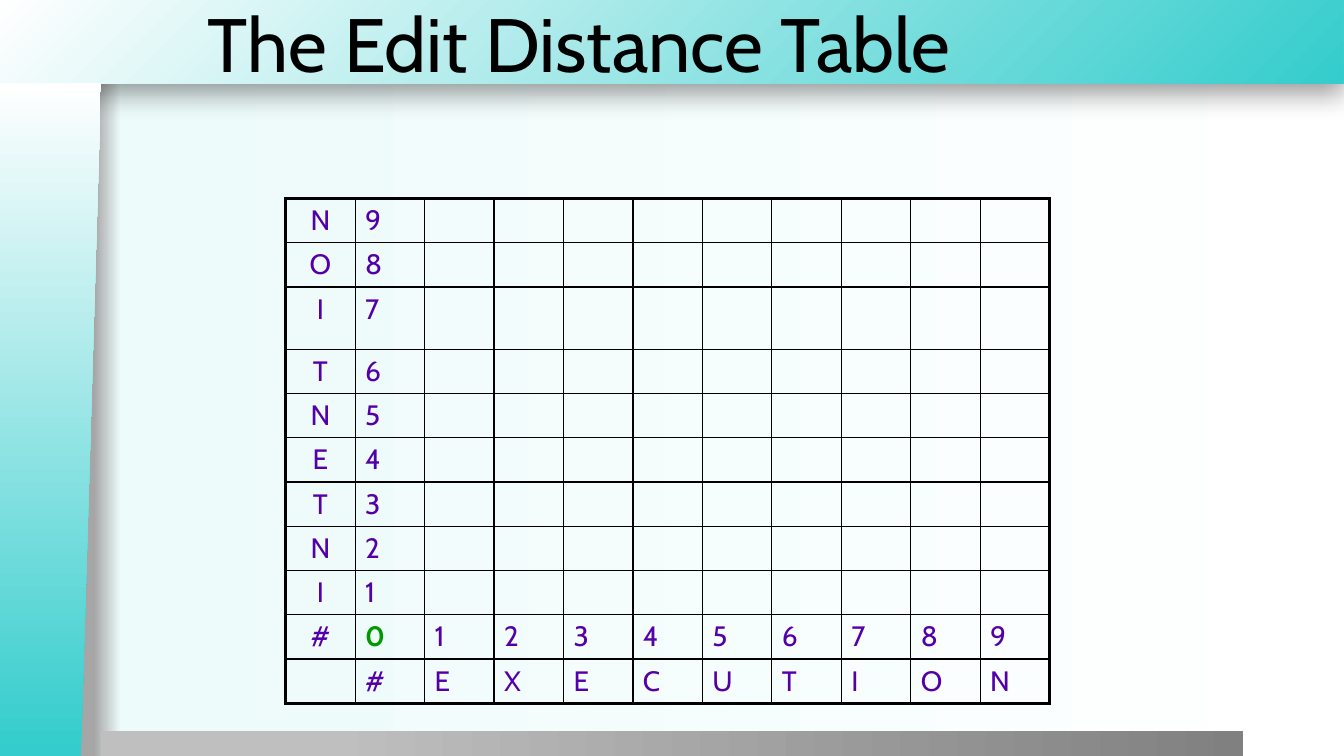
from dataclasses import dataclass

from lxml import etree
from pptx import Presentation
from pptx.dml.color import RGBColor
from pptx.dml.fill import FillFormat
from pptx.enum.shapes import MSO_SHAPE
from pptx.enum.text import MSO_ANCHOR, PP_ALIGN
from pptx.oxml.ns import qn
from pptx.slide import Slide
from pptx.table import _Cell
from pptx.text.text import _Paragraph
from pptx.util import Cm, Pt

RECTANGLE = MSO_SHAPE.RECTANGLE
MANUAL_INPUT = MSO_SHAPE.FLOWCHART_MANUAL_INPUT
MIDDLE = MSO_ANCHOR.MIDDLE
LEFT, CENTER = PP_ALIGN.LEFT, PP_ALIGN.CENTER

FONT = "Cabin"
BLACK, WHITE, TEAL = "000000", "FFFFFF", "34CCCC"
PURPLE, GREEN = "5400A8", "009900"
THIN, THICK = 1, 2.25

SOURCE_WORD, TARGET_WORD = "INTENTION", "EXECUTION"
COLUMN_WIDTH, ROW_HEIGHT, TALL_ROW_HEIGHT = 1.75, 1.11, 1.57
TALL_ROW = 2

Stops = tuple[tuple[int, str], ...]


@dataclass(frozen=True)
class Panel:
    kind: MSO_SHAPE
    left: float
    top: float
    width: float
    height: float
    stops: Stops
    radial: bool = False
    shadow: bool = False
    rotation: int = 0
    flipped: bool = False


BACKGROUND_STOPS: Stops = ((0, "A6A6A6"), (7, "A6A6A6"), (9, "EDFBFB"), (100, WHITE))
PANELS = (
    Panel(RECTANGLE, -0.03, 0, 33.88, 2.11, ((0, TEAL), (100, WHITE)),
          radial=True, shadow=True),
    Panel(RECTANGLE, 2.54, 18.42, 28.78, 0.66, ((20, "BFBFBF"), (100, "808080"))),
    Panel(MANUAL_INPUT, -7.21, 9.32, 16.97, 2.54, ((1, TEAL), (100, WHITE)),
          rotation=270, flipped=True),
)


def color(value: str) -> RGBColor:
    return RGBColor.from_string(value)


def add_element(parent: etree._Element, tag: str, **attributes: object) -> etree._Element:
    values = {name: str(value) for name, value in attributes.items()}
    return etree.SubElement(parent, qn(tag), values)


def add_color(parent: etree._Element, value: str) -> etree._Element:
    return add_element(parent, "a:srgbClr", val=value)


def set_gradient(fill: FillFormat, properties: etree._Element, stops: Stops,
                 radial: bool = False) -> None:
    """Fill left to right, or outwards from the bottom right corner if radial."""
    fill.gradient()
    gradient = properties.find(qn("a:gradFill"))
    for child in list(gradient):
        gradient.remove(child)
    gradient.set("rotWithShape", "1")
    stop_list = add_element(gradient, "a:gsLst")
    for position, value in stops:
        add_color(add_element(stop_list, "a:gs", pos=position * 1000), value)
    if radial:
        center = add_element(gradient, "a:path", path="circle")
        add_element(center, "a:fillToRect", l=100000, t=100000)
    else:
        add_element(gradient, "a:lin", ang=0, scaled=0)


def add_panel(slide: Slide, panel: Panel) -> None:
    shape = slide.shapes.add_shape(panel.kind, Cm(panel.left), Cm(panel.top),
                                   Cm(panel.width), Cm(panel.height))
    shape.rotation = panel.rotation
    shape.line.fill.background()
    shape.shadow.inherit = False
    properties = shape._element.spPr
    set_gradient(shape.fill, properties, panel.stops, panel.radial)
    if panel.flipped:
        properties.find(qn("a:xfrm")).set("flipV", "1")
    if panel.shadow:
        shadow = add_element(properties.find(qn("a:effectLst")), "a:outerShdw",
                             blurRad=Pt(20), dist=Pt(6), dir=90 * 60000,
                             algn="t", rotWithShape=0)
        add_element(add_color(shadow, BLACK), "a:alpha", val=40000)


def write(paragraph: _Paragraph, text: str, size: int, text_color: str,
          bold: bool = False) -> None:
    run = paragraph.add_run()
    run.text = text
    for name, value in {"name": FONT, "size": Pt(size), "bold": bold}.items():
        setattr(run.font, name, value)
    run.font.color.rgb = color(text_color)


def add_title(slide: Slide, text: str) -> None:
    box = slide.shapes.add_textbox(Cm(4.98), Cm(0), Cm(28.9), Cm(2.11))
    frame = box.text_frame
    for name, value in {"word_wrap": True, "vertical_anchor": MIDDLE}.items():
        setattr(frame, name, value)
    write(frame.paragraphs[0], text, 54, BLACK)


def set_borders(cell: _Cell, widths: dict[str, float]) -> None:
    properties = cell._tc.get_or_add_tcPr()
    for side, width in widths.items():
        line = add_element(properties, f"a:ln{side}", w=Pt(width))
        add_color(add_element(line, "a:solidFill"), BLACK)


def distance_rows() -> list[list[str]]:
    """Source word upwards on the left, target word along the bottom."""
    size = len(TARGET_WORD)
    rows = [[letter, str(distance)] + [""] * size
            for distance, letter in enumerate(SOURCE_WORD, start=1)][::-1]
    rows.append(["#"] + [str(distance) for distance in range(size + 1)])
    rows.append(["", "#", *TARGET_WORD])
    return rows


def add_distance_table(slide: Slide) -> None:
    rows = distance_rows()
    last_row, last_column = len(rows) - 1, len(rows[0]) - 1
    heights = [TALL_ROW_HEIGHT if index == TALL_ROW else ROW_HEIGHT
               for index in range(len(rows))]
    table = slide.shapes.add_table(
        len(rows), len(rows[0]), Cm(7.2), Cm(5),
        Cm(COLUMN_WIDTH * len(rows[0])), Cm(sum(heights))).table
    table.first_row = table.horz_banding = False
    for column in table.columns:
        column.width = Cm(COLUMN_WIDTH)

    for row_index, (texts, height) in enumerate(zip(rows, heights)):
        table.rows[row_index].height = Cm(height)
        for column_index, text in enumerate(texts):
            cell = table.cell(row_index, column_index)
            set_borders(cell, {
                "L": THICK if column_index == 0 else THIN,
                "R": THICK if column_index == last_column else THIN,
                "T": THICK if row_index == 0 else THIN,
                "B": THICK if row_index == last_row else THIN,
            })
            cell.fill.background()
            if text:
                is_start = text == "0"
                paragraph = cell.text_frame.paragraphs[0]
                paragraph.alignment = CENTER if column_index == 0 else LEFT
                write(paragraph, text, 20, GREEN if is_start else PURPLE, is_start)


def main() -> None:
    presentation = Presentation()
    presentation.slide_width, presentation.slide_height = Cm(33.87), Cm(19.05)
    slide = presentation.slides.add_slide(presentation.slide_layouts[6])
    background = slide.background.fill
    set_gradient(background, slide._element.cSld.bg.bgPr, BACKGROUND_STOPS)
    for panel in PANELS:
        add_panel(slide, panel)
    add_distance_table(slide)
    add_title(slide, "The Edit Distance Table")
    presentation.save("out.pptx")


if __name__ == "__main__":
    main()
